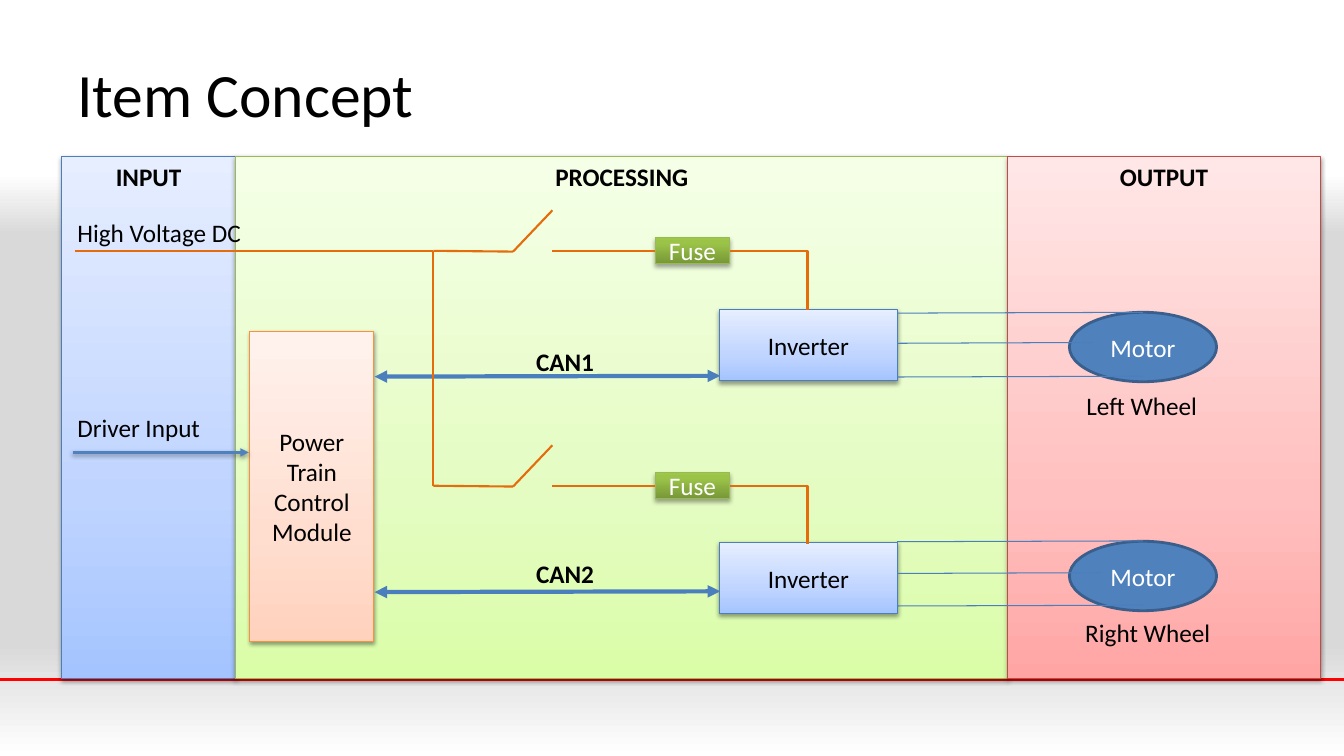
"""Builds the Item Concept slide: power train input, processing and output."""
from lxml import etree
from pptx import Presentation
from pptx import util as u
from pptx.dml.color import RGBColor
from pptx.enum import shapes, text
from pptx.oxml import parse_xml
from pptx.oxml.ns import nsdecls, qn

THEME = {
    "font": "Calibri", "title": 44, "body": 18,
    "ink": "000000", "light": "FFFFFF", "wire": "E46C0A",
    "signal": "4B7EBC", "driver": "4F81BD", "ground": "FF0000",
    "blue": ([(0, "A4C4FF"), (35, "BFD4FF"), (100, "E6EEFF")], "4B7EBC"),
    "green": ([(0, "DAFDA7"), (35, "E4FCC2"), (100, "F5FFE7")], "98B955"),
    "red": ([(0, "FFA6A5"), (35, "FFC0BF"), (100, "FFE7E7")], "BF4C48"),
    "orange": ([(0, "FFD2BD"), (35, "FFDED0"), (100, "FFF2ED")], "F69240"),
    "fuse": ([(0, "779737"), (80, "9BC348"), (100, "9DC746")], "98B955"),
    "motor": ("4F81BD", "3A5F8C"),
    "backdrop": [(0, "FFFFFF"), (23, "FFFFFF"), (31, "D9D9D9"),
                 (85, "D9D9D9"), (100, "FFFFFF")],
}
WIDTH, HEIGHT = 33.87, 19.05
PANELS = [("INPUT", 1.55, "blue"), ("PROCESSING", 5.94, "green"), ("OUTPUT", 25.4, "red")]
PANEL_TOP, PANEL_HEIGHT, PANEL_END = 3.94, 13.16, 33.27
MODULE = ("Power Train Control Module", 6.3, 8.36, 3.12, 7.8)
BUS_X, SWITCH_X, CONTACT_X, FUSE_X, FUSE_WIDTH = 10.92, 12.93, 13.92, 16.51, 1.88
INVERTER_X, INVERTER_WIDTH, MOTOR_X, MOTOR_WIDTH = 18.14, 4.47, 26.95, 3.71
BRANCHES = [
    {"feed": 6.32, "inverter": 7.8, "motor": 7.87, "bus": 9.49,
     "phases": [(7.89, 28.8), (8.65, 27.53), (9.5, 28.8)],
     "can": ("CAN1", 13.26, 8.59, 1.98), "wheel": ("Left Wheel", 27.13, 9.7, 3.35)},
    {"feed": 12.24, "inverter": 13.67, "motor": 13.64, "bus": 14.92,
     "phases": [(13.65, 28.8), (14.45, 27.76), (15.27, 28.8)],
     "can": ("CAN2", 13.26, 13.94, 1.98), "wheel": ("Right Wheel", 27.1, 15.44, 3.71)},
]
INPUTS = [("High Voltage DC", 1.7, 5.36, 4.7), ("Driver Input", 1.7, 10.26, 3.63)]

deck = Presentation()
deck.slide_width, deck.slide_height = u.Cm(WIDTH), u.Cm(HEIGHT)
page = deck.slides.add_slide(deck.slide_layouts[6])


def cm(*lengths):
    return [u.Cm(length) for length in lengths]


def color(name):
    return RGBColor.from_string(THEME.get(name, name))


def fill_gradient(fill, element, stops, angle):
    fill.gradient()
    gradient = next(element.iter(qn("a:gradFill")))
    for child in list(gradient):
        gradient.remove(child)
    marks = "".join(f'<a:gs pos="{spot * 1000}"><a:srgbClr val="{shade}"/></a:gs>'
                    for spot, shade in stops)
    gradient.append(parse_xml(f'<a:gsLst {nsdecls("a")}>{marks}</a:gsLst>'))
    etree.SubElement(gradient, qn("a:lin"), ang=str(angle * 60000), scaled="0")


def add_shadow(effects, alpha=38, distance=20000):
    effects.append(parse_xml(
        f'<a:outerShdw {nsdecls("a")} blurRad="40000" dist="{distance}" dir="5400000" '
        f'rotWithShape="0"><a:srgbClr val="000000"><a:alpha val="{alpha * 1000}"/>'
        '</a:srgbClr></a:outerShdw>'))


def write(frame, words, ink="ink", size="body", bold=False, align=None,
          anchor=text.MSO_ANCHOR.TOP, wrap=True):
    frame.word_wrap = wrap
    frame.vertical_anchor = anchor
    para = frame.paragraphs[0]
    para.alignment = align
    span = para.add_run()
    span.text = words
    span.font.name, span.font.size = THEME["font"], u.Pt(THEME[size])
    span.font.bold = bold
    span.font.color.rgb = color(ink)


def add_label(words, left, top, width, bold=False):
    box = page.shapes.add_textbox(*cm(left, top, width, 1.03))
    write(box.text_frame, words, bold=bold, wrap=False)
    box.text_frame.auto_size = text.MSO_AUTO_SIZE.SHAPE_TO_FIT_TEXT


def add_block(words, left, top, width, height, style, ink="ink", bold=False,
              anchor=text.MSO_ANCHOR.MIDDLE):
    is_motor = style == "motor"
    kind = shapes.MSO_SHAPE.OVAL if is_motor else shapes.MSO_SHAPE.RECTANGLE
    block = page.shapes.add_shape(kind, *cm(left, top, width, height))
    paint, edge = THEME[style]
    block.shadow.inherit = False
    if is_motor:
        block.fill.solid()
        block.fill.fore_color.rgb = color(paint)
    else:
        fill_gradient(block.fill, block._element, paint, 270)
        effects = next(block._element.iter(qn("a:effectLst")))
        add_shadow(effects, *((35, 23000) if style == "fuse" else ()))
    block.line.color.rgb = color(edge)
    block.line.width = u.Pt(2 if is_motor else 0.75)
    write(block.text_frame, words, ink, bold=bold, align=text.PP_ALIGN.CENTER, anchor=anchor)


def add_line(start, end, ink, weight, arrows=(), elbow=False, shadow=False):
    kind = shapes.MSO_CONNECTOR.ELBOW if elbow else shapes.MSO_CONNECTOR.STRAIGHT
    line = page.shapes.add_connector(kind, *cm(*start, *end))
    line.line.color.rgb, line.line.width = color(ink), u.Pt(weight)
    properties = line._element.spPr
    if elbow:
        properties.find(qn("a:prstGeom")).set("prst", "bentConnector2")
    for arrow in arrows:
        etree.SubElement(properties.find(qn("a:ln")), qn(f"a:{arrow}"), type="triangle")
    effects = etree.SubElement(properties, qn("a:effectLst"))
    if shadow:
        add_shadow(effects)


def add_branch(branch):
    feed, bus = branch["feed"], branch["bus"]
    add_block("Motor", MOTOR_X, branch["motor"], MOTOR_WIDTH, 1.75, "motor", "light")
    add_block("Inverter", INVERTER_X, branch["inverter"], INVERTER_WIDTH, 1.8, "blue")
    for height, end in branch["phases"]:
        add_line((INVERTER_X + INVERTER_WIDTH, height), (end, height - 0.02), "signal", 0.75)
    add_line((9.44, bus), (18.15, bus - 0.02), "signal", 3, ("headEnd", "tailEnd"))
    add_label(*branch["can"], bold=True)
    add_label(*branch["wheel"])
    add_block("Fuse", FUSE_X, feed - 0.33, FUSE_WIDTH, 0.66, "fuse", "light")
    add_line((FUSE_X + FUSE_WIDTH, feed), (20.35, feed + 1.48), "wire", 1.5, elbow=True)
    for start, end in [((BUS_X, feed), (SWITCH_X, feed + 0.02)),
                       ((SWITCH_X, feed + 0.02), (CONTACT_X, feed - 1.02)),
                       ((CONTACT_X, feed), (FUSE_X, feed))]:
        add_line(start, end, "wire", 1.5)


def main():
    fill_gradient(page.background.fill, page._element, THEME["backdrop"], 90)
    add_line((0, 17.12), (WIDTH, 17.12), "ground", 2)
    edges = [left for _, left, _ in PANELS[1:]] + [PANEL_END]
    for (name, left, style), right in zip(PANELS, edges):
        add_block(name, left, PANEL_TOP, right - left, PANEL_HEIGHT, style,
                  bold=True, anchor=text.MSO_ANCHOR.TOP)
    title = page.shapes.add_textbox(*cm(1.7, 0.76, 30.48, 3.18))
    write(title.text_frame, "Item Concept", size="title", anchor=text.MSO_ANCHOR.MIDDLE)
    add_block(*MODULE, "orange")
    for branch in BRANCHES:
        add_branch(branch)
    upper, lower = [branch["feed"] for branch in BRANCHES]
    add_line((BUS_X, lower), (BUS_X, upper), "wire", 1.5)
    add_line((BUS_X, upper), (1.88, upper), "wire", 1.5)
    add_line((1.83, 11.4), (6.27, 11.4), "driver", 2, ("tailEnd",), shadow=True)
    for label in INPUTS:
        add_label(*label)
    deck.save("out.pptx")


if __name__ == "__main__":
    main()
